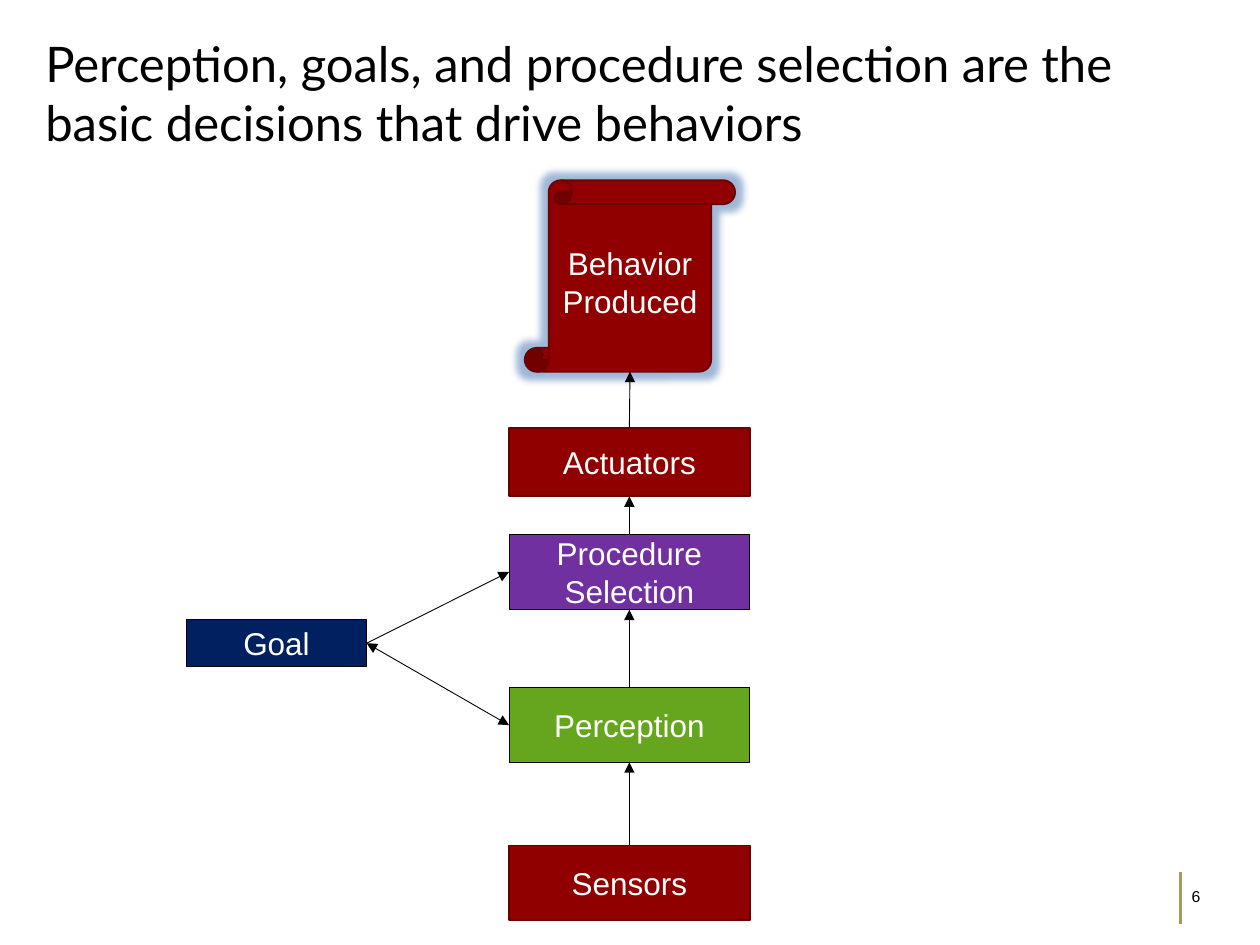
from lxml.etree import SubElement
from pptx import Presentation
from pptx.dml.color import RGBColor
from pptx.enum.shapes import MSO_CONNECTOR as LINK, MSO_SHAPE as SHAPE
from pptx.enum.text import MSO_ANCHOR as ANCHOR, MSO_AUTO_SIZE as FIT, PP_ALIGN as ALIGN
from pptx.oxml.ns import qn
from pptx.util import Inches, Pt

deck = Presentation()
deck.slide_width, deck.slide_height = Inches(10), Inches(7.5)
slide = deck.slides.add_slide(deck.slide_layouts[5])


def area(left, top, width, height):
    across, down = deck.slide_width / 100, deck.slide_height / 100
    return [int(share * unit) for share, unit in
            zip((left, top, width, height), (across, down, across, down))]


def paint(target, color, weight=None):
    if weight:
        target.width = Pt(weight)
        target = target.fill
    target.solid()
    target.fore_color.rgb = RGBColor.from_string(color)


headline = slide.shapes.title
headline.left, headline.top, headline.width, headline.height = area(2.6, 2.93, 94.9, 13.33)
headline.text_frame.text = ("Perception, goals, and procedure selection are the "
                            "basic decisions that drive behaviors")
headline.text_frame.auto_size = FIT.NONE
headline.text_frame.vertical_anchor = ANCHOR.TOP
headline.text_frame.paragraphs[0].alignment = ALIGN.LEFT
headline_font = headline.text_frame.paragraphs[0].runs[0].font
headline_font.name, headline_font.size = "Lato", Pt(28)
paint(headline_font.fill, "000000")

RED, DARK_RED, BLACK = "900001", "6B0001", "000000"
COLUMN, WIDTH = 40.4, 19.1
stages = [
    ("Behavior\nProduced", SHAPE.VERTICAL_SCROLL, (41.65, 19.07, 16.7, 20.27), RED, DARK_RED, 1),
    ("Actuators", SHAPE.RECTANGLE, (COLUMN, 45.33, WIDTH, 7.2), RED, DARK_RED, 1),
    ("Procedure Selection", SHAPE.RECTANGLE, (COLUMN, 56.53, WIDTH, 8), "7030A0", BLACK, 0.5),
    ("Perception", SHAPE.RECTANGLE, (COLUMN, 72.8, WIDTH, 7.87), "66A61E", BLACK, 0.5),
    ("Sensors", SHAPE.RECTANGLE, (COLUMN, 89.47, WIDTH, 7.87), RED, DARK_RED, 1),
    ("Goal", SHAPE.RECTANGLE, (14.8, 65.6, 14.3, 4.93), "002060", BLACK, 0.5),
]
nodes = []
for label, outline, place, color, edge, weight in stages:
    node = slide.shapes.add_shape(outline, *area(*place))
    node.shadow.inherit = False
    paint(node.fill, color)
    paint(node.line, edge, weight)
    words = node.text_frame
    words.text = label
    words.word_wrap = True
    words.vertical_anchor = ANCHOR.MIDDLE
    words.margin_left = words.margin_right = 0
    for paragraph in words.paragraphs:
        paragraph.alignment = ALIGN.CENTER
        font = paragraph.runs[0].font
        font.name, font.size = "Arial", Pt(18)
        paint(font.fill, "FFFFFF")
    nodes.append(node)
behavior, actuators, procedure, perception, sensors, goal = nodes

effects = behavior.element.spPr.find(qn("a:effectLst"))
glow = SubElement(effects, qn("a:glow"), rad=str(Pt(8)))
glow_color = SubElement(glow, qn("a:srgbClr"), val="4070B0")
SubElement(glow_color, qn("a:alpha"), val="50000")

TOP, LEFT, BOTTOM, RIGHT = range(4)
flows = [
    (sensors, TOP, perception, BOTTOM, ["tailEnd"]),
    (perception, TOP, procedure, BOTTOM, ["tailEnd"]),
    (procedure, TOP, actuators, BOTTOM, ["tailEnd"]),
    (actuators, TOP, behavior, BOTTOM, ["tailEnd"]),
    (goal, RIGHT, procedure, LEFT, ["tailEnd"]),
    (goal, RIGHT, perception, LEFT, ["headEnd", "tailEnd"]),
]
for source, exit_side, target, entry_side, tips in flows:
    arrow = slide.shapes.add_connector(LINK.STRAIGHT, 0, 0, 0, 0)
    arrow.begin_connect(source, exit_side)
    arrow.end_connect(target, entry_side)
    paint(arrow.line, BLACK, 0.5)
    for tip in tips:
        SubElement(arrow.line._get_or_add_ln(), qn("a:" + tip), type="triangle")
    SubElement(arrow.element.spPr, qn("a:effectLst"))

page_bar = slide.shapes.add_connector(LINK.STRAIGHT, 0, 0, 0, 0)
page_bar.left, page_bar.top, page_bar.width, page_bar.height = area(93.7, 92.27, 0, 5.47)
paint(page_bar.line, "A59A60", 2)
SubElement(page_bar.element.spPr, qn("a:effectLst"))

page = slide.shapes.add_textbox(*area(93.6, 93.07, 3.9, 3.6)).text_frame
page.text = "6"
page.word_wrap = True
page.vertical_anchor = ANCHOR.MIDDLE
page_font = page.paragraphs[0].runs[0].font
page_font.name, page_font.size = "Arial", Pt(9)
paint(page_font.fill, BLACK)

deck.save("out.pptx")
